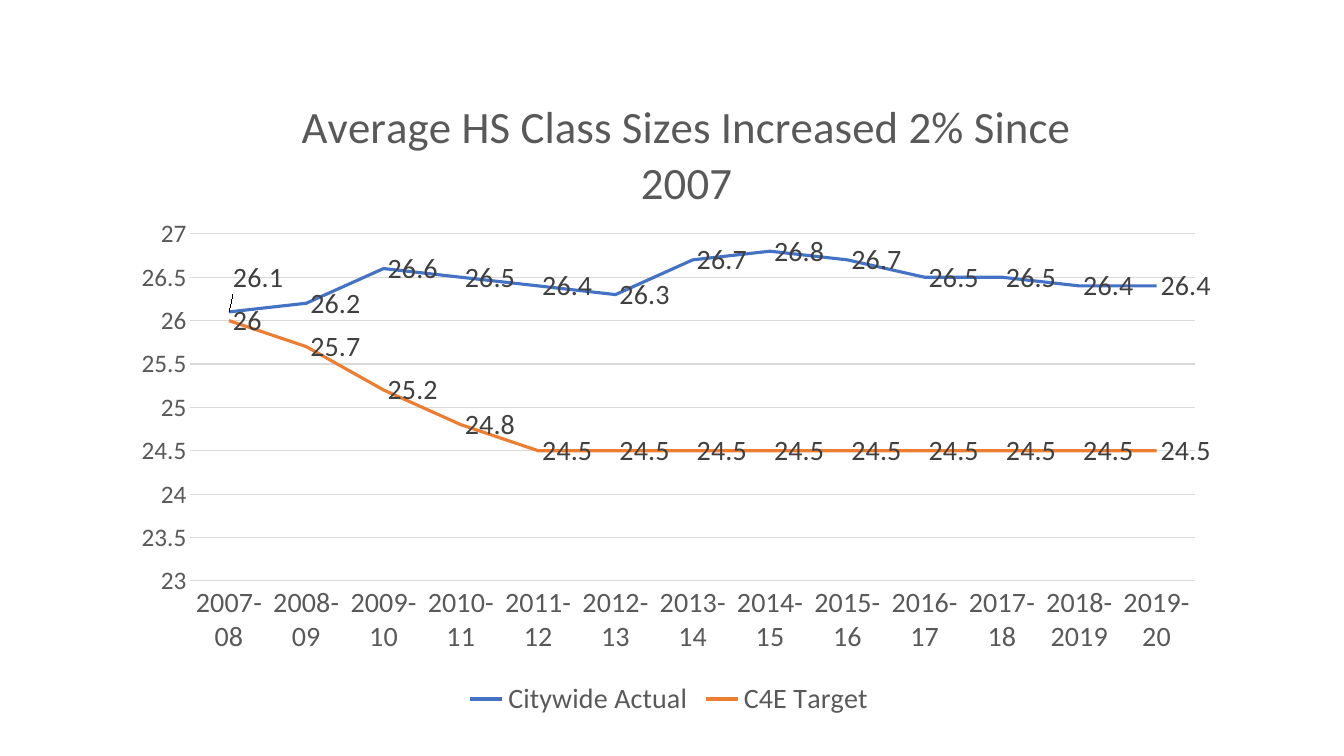
import pptx
import pptx.chart.data
import pptx.dml.color
import pptx.enum.chart
import pptx.oxml
import pptx.oxml.ns
import pptx.util

# Content
TITLE = "Average HS Class Sizes Increased 2% Since 2007"
YEARS = ["2007-08", "2008-09", "2009-10", "2010-11", "2011-12", "2012-13", "2013-14",
         "2014-15", "2015-16", "2016-17", "2017-18", "2018-2019", "2019-20"]
SERIES = [
    ("Citywide Actual", "actual",
     [26.1, 26.2, 26.6, 26.5, 26.4, 26.3, 26.7, 26.8, 26.7, 26.5, 26.5, 26.4, 26.4]),
    ("C4E Target", "target", [26, 25.7, 25.2, 24.8] + [24.5] * 9),
]
COLORS = {"actual": "4472C4", "target": "ED7D31", "text": "595959",
          "label": "404040", "grid": "D9D9D9"}

# Geometry in px: left, top, width, height
PX = 914400 / 100.8
CHART = (120, 66, 1098, 656)
PLOT = (190, 234, 1005, 347)
TITLE_CORNER = (293, 87)
FIRST_LABEL_RISE = 35


def emu(px):
    return pptx.util.Emu(round(px * PX))


def color(name):
    return pptx.dml.color.RGBColor.from_string(COLORS[name])


def style_font(font, size, name):
    font.name = "Calibri"
    font.size = pptx.util.Pt(size)
    font.bold = False
    font.color.rgb = color(name)


def style_line(line, name, width):
    line.color.rgb = color(name)
    line.width = pptx.util.Pt(width)


def manual_layout(**settings):
    items = "".join(f'<c:{tag} val="{value}"/>' for tag, value in settings.items())
    return pptx.oxml.parse_xml(
        f'<c:layout {pptx.oxml.ns.nsdecls("c")}><c:manualLayout>{items}'
        '</c:manualLayout></c:layout>')


def replace_layout(parent, previous, layout):
    """Put a layout right after the named child, or first if there is none."""
    for old in parent.findall(pptx.oxml.ns.qn("c:layout")):
        parent.remove(old)
    anchor = parent.find(pptx.oxml.ns.qn(previous)) if previous else None
    if anchor is None:
        parent.insert(0, layout)
    else:
        anchor.addnext(layout)


def share(px, axis):
    """Position inside the chart as a fraction of its width (0) or height (1)."""
    return round((px - CHART[axis]) / CHART[axis + 2], 3)


def main():
    deck = pptx.Presentation()
    deck.slide_width = pptx.util.Inches(13.33)
    deck.slide_height = pptx.util.Inches(7.5)
    page = deck.slides.add_slide(deck.slide_layouts[6])

    # Chart
    data = pptx.chart.data.CategoryChartData(number_format="General")
    data.categories = YEARS
    for name, _, values in SERIES:
        data.add_series(name, values)
    chart = page.shapes.add_chart(
        pptx.enum.chart.XL_CHART_TYPE.LINE, *map(emu, CHART), data).chart
    chart.font.name = "Calibri"
    chart.font.size = pptx.util.Pt(10)
    chart.plots[0].vary_by_categories = False

    # Title
    chart.has_title = True
    para = chart.chart_title.text_frame.paragraphs[0]
    para.text = TITLE
    style_font(para.font, 32, "text")
    chart.chart_title.include_in_layout = False
    replace_layout(chart.chart_title._element, "c:tx", manual_layout(
        xMode="edge", yMode="edge",
        x=share(TITLE_CORNER[0], 0), y=share(TITLE_CORNER[1], 1)))

    # Axes
    for axis, size in ((chart.category_axis, 20), (chart.value_axis, 18)):
        axis.major_tick_mark = axis.minor_tick_mark = pptx.enum.chart.XL_TICK_MARK.NONE
        style_font(axis.tick_labels.font, size, "text")
    style_line(chart.category_axis.format.line, "grid", 0.75)
    chart.value_axis.format.line.fill.background()
    chart.value_axis.minimum_scale = 23
    chart.value_axis.maximum_scale = 27
    chart.value_axis.major_unit = 0.5
    style_line(chart.value_axis.major_gridlines.format.line, "grid", 0.75)

    # Lines and value labels
    right = pptx.enum.chart.XL_LABEL_POSITION.RIGHT
    for series, (_, key, _) in zip(chart.plots[0].series, SERIES):
        series.smooth = False
        style_line(series.format.line, key, 2.25)
        series.marker.style = pptx.enum.chart.XL_MARKER_STYLE.NONE
        labels = series.data_labels
        labels.show_value = True
        labels.position = right
        style_font(labels.font, 20, "label")

    # The first actual value sits above its point
    actual = chart.plots[0].series[0]
    first_label = actual.points[0].data_label
    first_label.position = right
    style_font(first_label.font, 20, "label")
    first_element = actual.data_labels._element.find(pptx.oxml.ns.qn("c:dLbl"))
    replace_layout(first_element, "c:idx", manual_layout(
        x=0, y=round(-FIRST_LABEL_RISE / CHART[3], 3)))

    # Legend and plot area
    chart.has_legend = True
    chart.legend.position = pptx.enum.chart.XL_LEGEND_POSITION.BOTTOM
    chart.legend.include_in_layout = False
    style_font(chart.legend.font, 20, "text")
    plot_area = chart._chartSpace.chart.plotArea
    replace_layout(plot_area, None, manual_layout(
        layoutTarget="inner", xMode="edge", yMode="edge",
        x=share(PLOT[0], 0), y=share(PLOT[1], 1),
        w=round(PLOT[2] / CHART[2], 3), h=round(PLOT[3] / CHART[3], 3)))

    deck.save("out.pptx")


if __name__ == "__main__":
    main()
